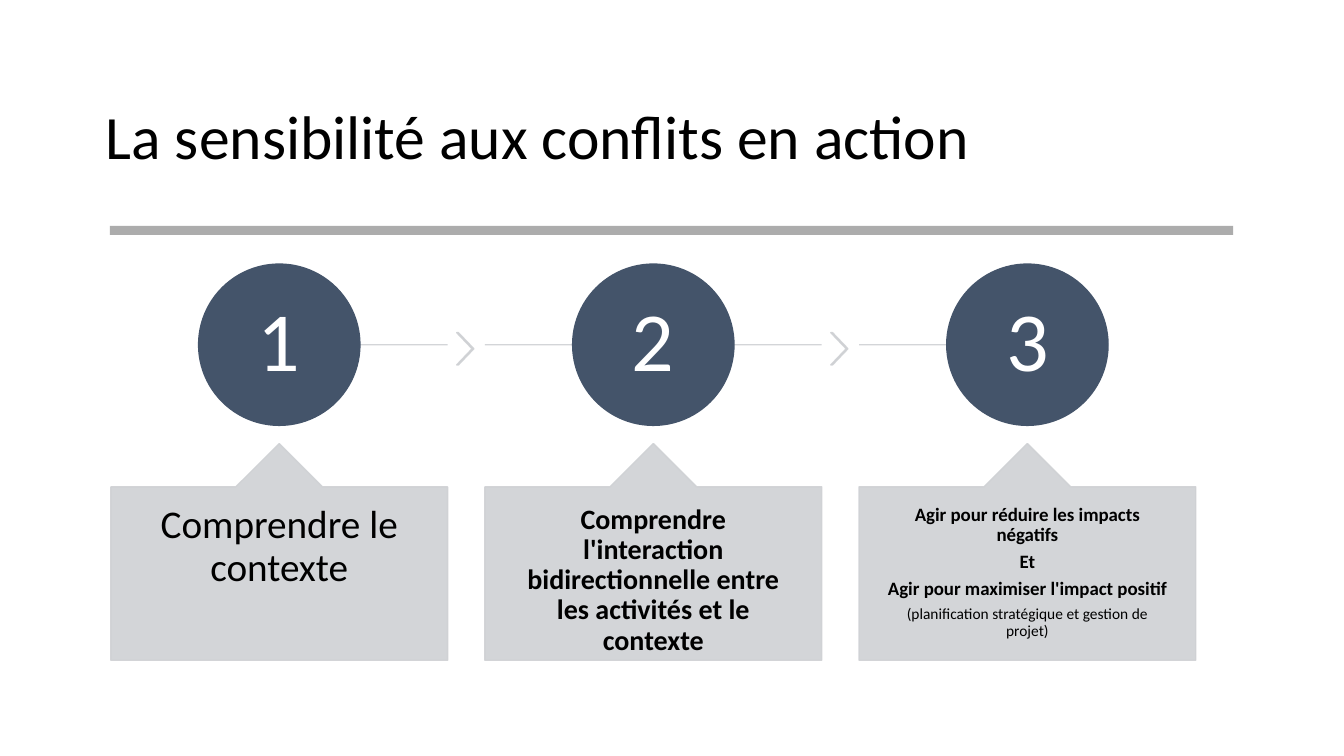
from lxml import etree
from pptx import Presentation
from pptx.dml.color import RGBColor
from pptx.enum.shapes import MSO_CONNECTOR, MSO_SHAPE
from pptx.enum.text import MSO_ANCHOR, PP_ALIGN
from pptx.oxml.ns import qn
from pptx.util import Inches, Pt

LINE = MSO_CONNECTOR.STRAIGHT
RECT, OVAL = MSO_SHAPE.RECTANGLE, MSO_SHAPE.OVAL
CHEVRON, CALLOUT = MSO_SHAPE.CHEVRON, MSO_SHAPE.UP_ARROW_CALLOUT
TOP, MIDDLE = MSO_ANCHOR.TOP, MSO_ANCHOR.MIDDLE
LEFT, CENTER = PP_ALIGN.LEFT, PP_ALIGN.CENTER

FONT = "Calibri"
COLORS = {"text": "000000", "white": "FFFFFF", "rule": "808080",
          "navy": "44546A", "pale": "CFD1D4"}

# Three equal columns
COL_LEFT, COL_PITCH, COL_W = 1.1, 3.71, 3.34
CIRCLE = 1.6
LINE_Y = 3.42

# Each step: paragraphs as (text, size, bold)
STEPS = [
    [("Comprendre le contexte", 28, False)],
    [("Comprendre l'interaction bidirectionnelle entre les activités "
      "et le contexte", 20, True)],
    [("Agir pour réduire les impacts négatifs", 13.5, True),
     ("Et", 13.5, True),
     ("Agir pour maximiser l'impact positif", 13.5, True),
     ("(planification stratégique et gestion de projet)", 11, False)],
]


def set_alpha(sp, percent):
    """Apply opacity to every colour of a shape's fill and line."""
    for clr in sp._element.spPr.iter(qn("a:srgbClr")):
        etree.SubElement(clr, qn("a:alpha")).set("val", str(percent * 1000))


def add_text(tf, text, size, bold=False, color="text", align=CENTER, after=0.35):
    """Write one paragraph; space after is a share of the font size."""
    p = tf.paragraphs[0]
    if p.runs:
        p = tf.add_paragraph()
    p.alignment = align
    p.line_spacing = 0.9
    p.space_after = Pt(size * after)
    r = p.add_run()
    r.text = text
    r.font.name, r.font.size, r.font.bold = FONT, Pt(size), bold
    r.font.color.rgb = RGBColor.from_string(COLORS[color])


def set_frame(sp, anchor, inset_x, inset_y):
    tf = sp.text_frame
    tf.word_wrap = True
    tf.vertical_anchor = anchor
    tf.margin_left = tf.margin_right = Inches(inset_x)
    tf.margin_top = tf.margin_bottom = Inches(inset_y)
    return tf


def add_shape(s, kind, x, y, w, h, color, adj=(), alpha=100, line=True):
    sp = s.shapes.add_shape(kind, Inches(x), Inches(y), Inches(w), Inches(h))
    sp.shadow.inherit = False
    for i, value in enumerate(adj):
        sp.adjustments[i] = value
    rgb = RGBColor.from_string(COLORS[color])
    sp.fill.solid()
    sp.fill.fore_color.rgb = rgb
    if line:
        sp.line.color.rgb = rgb
        sp.line.width = Pt(1)
    else:
        sp.line.fill.background()
    if alpha < 100:
        set_alpha(sp, alpha)
    return sp


def add_line(s, x1, x2, y):
    c = s.shapes.add_connector(LINE, Inches(x1), Inches(y), Inches(x2), Inches(y))
    c.line.color.rgb = RGBColor.from_string(COLORS["pale"])
    c.line.width = Pt(1)
    set_alpha(c, 90)
    etree.SubElement(c._element.spPr, qn("a:effectLst"))


def add_title(s, text):
    sp = s.shapes.add_textbox(Inches(0.95), Inches(0.66), Inches(11.43), Inches(1.45))
    add_text(set_frame(sp, MIDDLE, 0.1, 0.05), text, 44, align=LEFT, after=0)


def add_step(s, i, paragraphs):
    x = COL_LEFT + i * COL_PITCH
    mid, right = x + COL_W / 2, x + COL_W
    first, last = i == 0, i == len(STEPS) - 1

    # Line through the circle, and chevron towards the next step
    add_line(s, mid if first else x, mid if last else right, LINE_Y)
    if not last:
        add_shape(s, CHEVRON, right + 0.09, 3.3, 0.17, 0.32, "pale", [0.9], 90)

    # Numbered circle
    circle = add_shape(s, OVAL, mid - CIRCLE / 2, LINE_Y - CIRCLE / 2,
                       CIRCLE, CIRCLE, "navy")
    add_text(set_frame(circle, MIDDLE, 0.06, 0.06), str(i + 1), 60, color="white")

    # Callout with the explanation
    box = add_shape(s, CALLOUT, x, 4.4, COL_W, 2.15, "pale", [0.5, 0.2, 0.2, 1], 90)
    tf = set_frame(box, TOP, 0.26, 0.18)
    for text, size, bold in paragraphs:
        add_text(tf, text, size, bold)


def main():
    prs = Presentation()
    prs.slide_width, prs.slide_height = Inches(13.33), Inches(7.5)
    s = prs.slides.add_slide(prs.slide_layouts[6])

    # Title and rule
    add_title(s, "La sensibilité aux conflits en action")
    add_shape(s, RECT, 1.09, 2.24, 11.14, 0.09, "rule", alpha=65, line=False)

    # Steps
    for i, paragraphs in enumerate(STEPS):
        add_step(s, i, paragraphs)

    prs.save("out.pptx")


if __name__ == "__main__":
    main()
